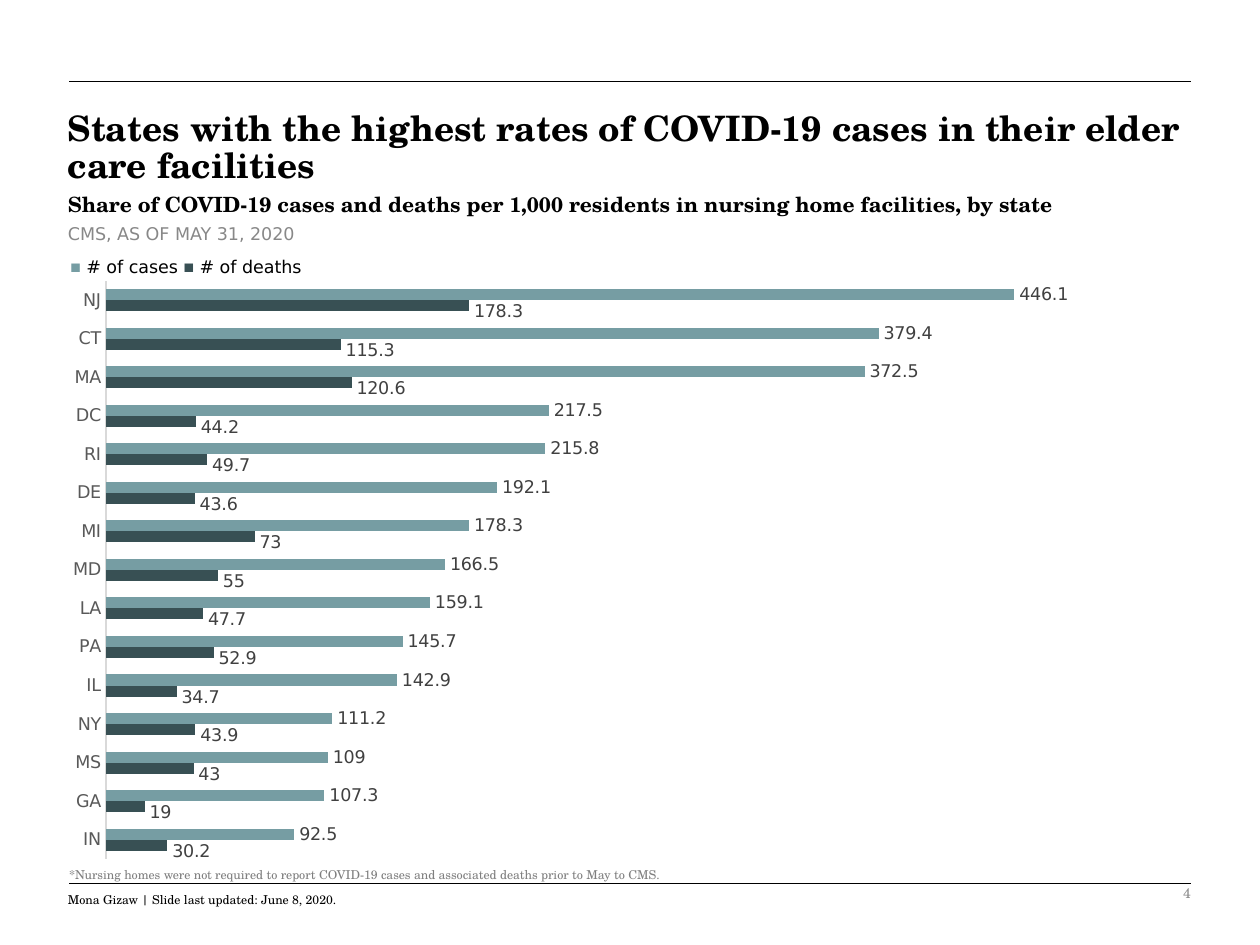
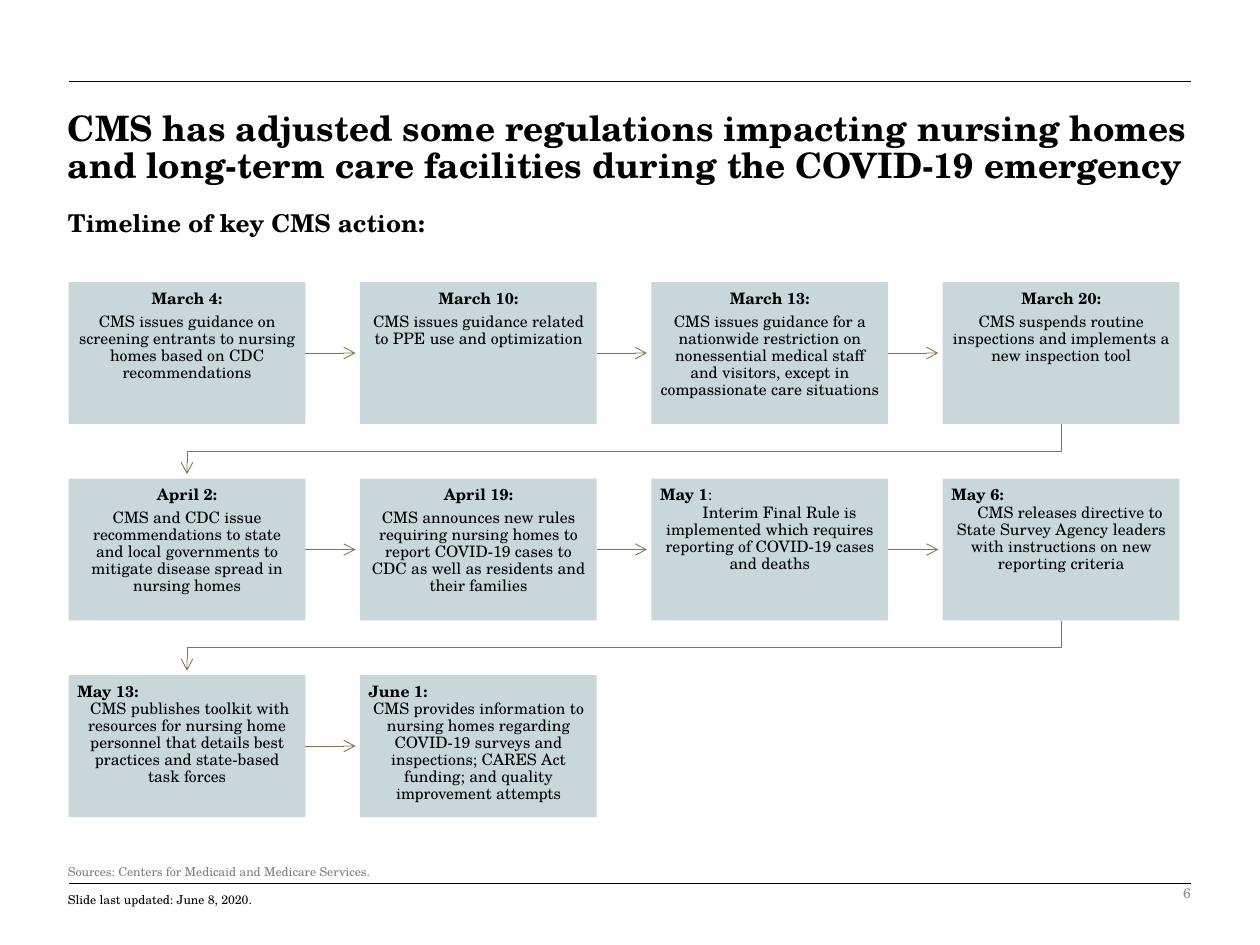
"""Build two slides on COVID-19 in nursing homes: a bar chart by state and a timeline of CMS actions."""
from lxml import etree
from pptx import Presentation
from pptx import util as u
from pptx.chart import data as chart_data
from pptx.dml import color
from pptx.enum import chart as chart_enum
from pptx.enum import shapes, text
from pptx.oxml import ns, parse_xml

SERIF, SANS, SYMBOL = "TeX Gyre Schola", "DejaVu Sans", "Arial"
BLACK, GRAY, PAGE_GRAY, SUBTITLE_GRAY = "000000", "7F7F7F", "8C8C8C", "888888"
CASES, DEATHS, BOX, ARROW = "769DA3", "385054", "C8D8DA", "8B724A"
AXIS_TEXT, AXIS_LINE, LABEL_TEXT = "595959", "D9D9D9", "404040"
LEFT, CENTER, RIGHT = text.PP_ALIGN.LEFT, text.PP_ALIGN.CENTER, text.PP_ALIGN.RIGHT

RATES = {
    "title": "States with the highest rates of COVID-19 cases in their elder care facilities",
    "page": "4",
    "updated": "Mona Gizaw | Slide last updated: June 8, 2020.",
    "note": "*Nursing homes were not required to report COVID-19 cases and associated deaths prior to May to CMS.",
    "note_box": (32.4, 491, 649, 16),
}
SUBTITLE = "Share of COVID-19 cases and deaths per 1,000 residents in nursing home facilities, by state"
SOURCE = "CMS, AS OF MAY 31, 2020"
STATES = [
    ("IN", 30.2, 92.5), ("GA", 19, 107.3), ("MS", 43, 109), ("NY", 43.9, 111.2),
    ("IL", 34.7, 142.9), ("PA", 52.9, 145.7), ("LA", 47.7, 159.1), ("MD", 55, 166.5),
    ("MI", 73, 178.3), ("DE", 43.6, 192.1), ("RI", 49.7, 215.8), ("DC", 44.2, 217.5),
    ("MA", 120.6, 372.5), ("CT", 115.3, 379.4), ("NJ", 178.3, 446.1),
]
TIMELINE = {
    "title": "CMS has adjusted some regulations impacting nursing homes and long-term care facilities "
             "during the COVID-19 emergency",
    "page": "6",
    "updated": "Slide last updated: June 8, 2020.",
    "note": "Sources: Centers for Medicaid and Medicare Services.",
    "note_box": (31.7, 489.6, 649, 15),
}
TIMELINE_HEADING = "Timeline of key CMS action:"
EVENTS = [
    ("March 4", CENTER, 0, "CMS issues guidance on screening entrants to nursing homes based on CDC recommendations"),
    ("March 10", CENTER, 0, "CMS issues guidance related to PPE use and optimization"),
    ("March 13", CENTER, 0, "CMS issues guidance for a nationwide restriction on nonessential medical staff "
                            "and visitors, except in compassionate care situations"),
    ("March 20", CENTER, 0, "CMS suspends routine inspections and implements a new inspection tool"),
    ("April 2", CENTER, 0, "CMS and CDC issue recommendations to state and local governments to mitigate "
                           "disease spread in nursing homes"),
    ("April 19", CENTER, 0, "CMS announces new rules requiring nursing homes to report COVID-19 cases to CDC "
                            "as well as residents and their families"),
    ("May 1", LEFT, 11, "Interim Final Rule is implemented which requires reporting of COVID-19 cases and deaths"),
    ("May 6", LEFT, 10, "CMS releases directive to State Survey Agency leaders with instructions on new "
                        "reporting criteria"),
    ("May 13", LEFT, 3, "CMS publishes toolkit with resources for nursing home personnel that details best "
                        "practices and state-based task forces"),
    ("June 1", LEFT, 0, "CMS provides information to nursing homes regarding COVID-19 surveys and inspections; "
                        "CARES Act funding; and quality improvement attempts"),
]
LIGHT_COLON = "May 1"
COLUMNS, GRID_LEFT, GRID_TOP = 4, 39.2, 161.2
BOX_WIDTH, BOX_HEIGHT, COLUMN_STEP, ROW_STEP = 135.3, 81.1, 166.5, 112.3
ARROW_LENGTH, TURN_DROP, TURN_LENGTH = 28.7, 15.6, 28.7


def rgb(value):
    return color.RGBColor.from_string(value)


def pts(*values):
    return [u.Pt(value) for value in values]


def set_format(target, values):
    for name, value in values.items():
        setattr(target, name, value)


def set_font(font, size, value, name=SERIF, bold=False):
    set_format(font, {"size": u.Pt(size), "name": name, "bold": bold})
    font.color.rgb = rgb(value)


def add_runs(paragraph, runs):
    for content, *style in runs:
        run = paragraph.add_run()
        run.text = content
        set_font(run.font, *style)


def add_text(slide, box, runs, wrap=True, anchor=text.MSO_ANCHOR.TOP, **layout):
    frame = slide.shapes.add_textbox(*pts(*box)).text_frame
    set_format(frame, {"word_wrap": wrap, "vertical_anchor": anchor})
    set_format(frame.paragraphs[0], layout)
    add_runs(frame.paragraphs[0], runs)


def style_line(shape, value, arrow=False):
    shape.line.color.rgb = rgb(value)
    shape.line.width = u.Pt(0.5)
    if arrow:
        etree.SubElement(shape.line._get_or_add_ln(), ns.qn("a:tailEnd"), type="arrow")


def add_line(slide, start, end, value, arrow=False):
    line = slide.shapes.add_connector(shapes.MSO_CONNECTOR.STRAIGHT, *pts(*start, *end))
    style_line(line, value, arrow)
    etree.SubElement(line._element.spPr, ns.qn("a:effectLst"))


def add_slide(presentation, content):
    slide = presentation.slides.add_slide(presentation.slide_layouts[6])
    for top in (504.7, 46.4):
        add_line(slide, (39.6, top), (680.4, top), BLACK)
    add_text(slide, (31.7, 59.8, 662.4, 50.4), [(content["title"], 20, BLACK, SERIF, True)], line_spacing=0.9)
    add_text(slide, (508.3, 496.1, 179.3, 28.8), [(content["page"], 8, PAGE_GRAY)],
             anchor=text.MSO_ANCHOR.MIDDLE, alignment=RIGHT)
    add_text(slide, (31.7, 505.4, 240, 26.6), [(content["updated"], 7, BLACK)], line_spacing=1.1)
    add_text(slide, content["note_box"], [(content["note"], 7, GRAY)], line_spacing=1.1)
    return slide


def set_plot_area(chart, **fractions):
    plot_area = chart._chartSpace.chart.plotArea
    for layout in plot_area.findall(ns.qn("c:layout")):
        plot_area.remove(layout)
    plot_area.insert(0, make_layout(layoutTarget="inner", xMode="edge", yMode="edge", **fractions))


def make_layout(**values):
    parts = "".join(f'<c:{name} val="{value}"/>' for name, value in values.items())
    return parse_xml(f'<c:layout {ns.nsdecls("c")}><c:manualLayout>{parts}</c:manualLayout></c:layout>')


def add_rate_chart(slide):
    states, deaths, cases = zip(*STATES)
    data = chart_data.CategoryChartData()
    data.categories = states
    data.add_series("# of deaths", deaths)
    data.add_series("# of cases", cases)
    chart = slide.shapes.add_chart(
        chart_enum.XL_CHART_TYPE.BAR_CLUSTERED, *pts(31.7, 150.5, 627.1, 345.6), data).chart
    set_format(chart, {"has_legend": False, "has_title": False})
    set_font(chart.font, 10, BLACK)
    set_plot_area(chart, x=0.046, y=0.029, w=0.928, h=0.956)
    set_format(chart.value_axis, {"visible": False, "has_major_gridlines": False,
                                  "minimum_scale": 0, "maximum_scale": 500})
    axis = chart.category_axis
    axis.major_tick_mark = chart_enum.XL_TICK_MARK.NONE
    set_font(axis.tick_labels.font, 10, AXIS_TEXT, SANS)
    axis.format.line.color.rgb = rgb(AXIS_LINE)
    axis.format.line.width = u.Pt(0.75)
    plot = chart.plots[0]
    set_format(plot, {"gap_width": 150, "overlap": 0, "vary_by_categories": False})
    for series, value in zip(plot.series, (DEATHS, CASES)):
        series.format.fill.solid()
        series.format.fill.fore_color.rgb = rgb(value)
        set_format(series.data_labels, {"show_value": True, "position": chart_enum.XL_LABEL_POSITION.OUTSIDE_END})
        set_font(series.data_labels.font, 10, LABEL_TEXT, SANS)
    lower_labels(plot.series[0], len(states))


def lower_labels(series, count):
    for index in range(count):
        label = series.points[index].data_label
        label.position = chart_enum.XL_LABEL_POSITION.OUTSIDE_END
        set_font(label.font, 10, LABEL_TEXT, SANS)
    for element in series._element.iter(ns.qn("c:dLbl")):
        element.insert(1, make_layout(x=0, y=0.01))


def build_rates(presentation):
    slide = add_slide(presentation, RATES)
    add_text(slide, (31.7, 105.8, 597.6, 21.6), [(SUBTITLE, 12, BLACK, SERIF, True)])
    add_text(slide, (31.7, 123.8, 576.7, 19.4), [(SOURCE, 10, SUBTITLE_GRAY, SANS)])
    add_rate_chart(slide)
    add_text(slide, (33.1, 142.6, 573.8, 19.4), [
        ("■", 10, CASES, SYMBOL), (" # of cases ", 10, BLACK, SANS),
        ("■", 10, DEATHS, SYMBOL), (" # of deaths", 10, BLACK, SANS)])


def add_event(slide, left, top, event):
    date, alignment, indent, action = event
    box = slide.shapes.add_shape(shapes.MSO_SHAPE.RECTANGLE, *pts(left, top, BOX_WIDTH, BOX_HEIGHT))
    box.shadow.inherit = False
    box.fill.solid()
    box.fill.fore_color.rgb = rgb(BOX)
    box.line.fill.background()
    frame = box.text_frame
    set_format(frame, {"word_wrap": True, "vertical_anchor": text.MSO_ANCHOR.TOP})
    set_format(frame, {f"margin_{side}": u.Pt(5) for side in ("left", "right", "top", "bottom")})
    heading, body = frame.paragraphs[0], frame.add_paragraph()
    set_format(heading, {"alignment": alignment, "line_spacing": 0.9,
                         "space_after": u.Pt(3.15 if alignment == CENTER else 0)})
    set_format(body, {"alignment": CENTER, "line_spacing": 0.9})
    if indent:
        body._p.get_or_add_pPr().set("indent", str(u.Pt(indent)))
    add_runs(heading, [(date, 9, BLACK, SERIF, True), (":", 9, BLACK, SERIF, date != LIGHT_COLON)])
    add_runs(body, [(action, 9, BLACK)])


def add_turn(slide, left, top):
    start_x, end_x = left + BOX_WIDTH / 2, GRID_LEFT + BOX_WIDTH / 2
    start_y = top + BOX_HEIGHT
    turn_y = start_y + TURN_DROP
    builder = slide.shapes.build_freeform(*pts(start_x, start_y), scale=1.0)
    corners = [(start_x, turn_y), (end_x, turn_y), (end_x, start_y + TURN_LENGTH)]
    builder.add_line_segments([pts(*corner) for corner in corners], close=False)
    turn = builder.convert_to_shape()
    turn.shadow.inherit = False
    turn.fill.background()
    style_line(turn, ARROW, arrow=True)


def build_timeline(presentation):
    slide = add_slide(presentation, TIMELINE)
    add_text(slide, (31.7, 115.2, 221, 24.5), [(TIMELINE_HEADING, 14, BLACK, SERIF, True)], wrap=False)
    for index, event in enumerate(EVENTS):
        row, column = divmod(index, COLUMNS)
        left, top = GRID_LEFT + column * COLUMN_STEP, GRID_TOP + row * ROW_STEP
        add_event(slide, left, top, event)
        if index == len(EVENTS) - 1:
            continue
        if column == COLUMNS - 1:
            add_turn(slide, left, top)
        else:
            right, middle = left + BOX_WIDTH, top + BOX_HEIGHT / 2
            add_line(slide, (right, middle), (right + ARROW_LENGTH, middle), ARROW, arrow=True)


def main():
    presentation = Presentation()
    set_format(presentation, {"slide_width": u.Pt(720), "slide_height": u.Pt(540)})
    build_rates(presentation)
    build_timeline(presentation)
    presentation.save("out.pptx")


if __name__ == "__main__":
    main()
